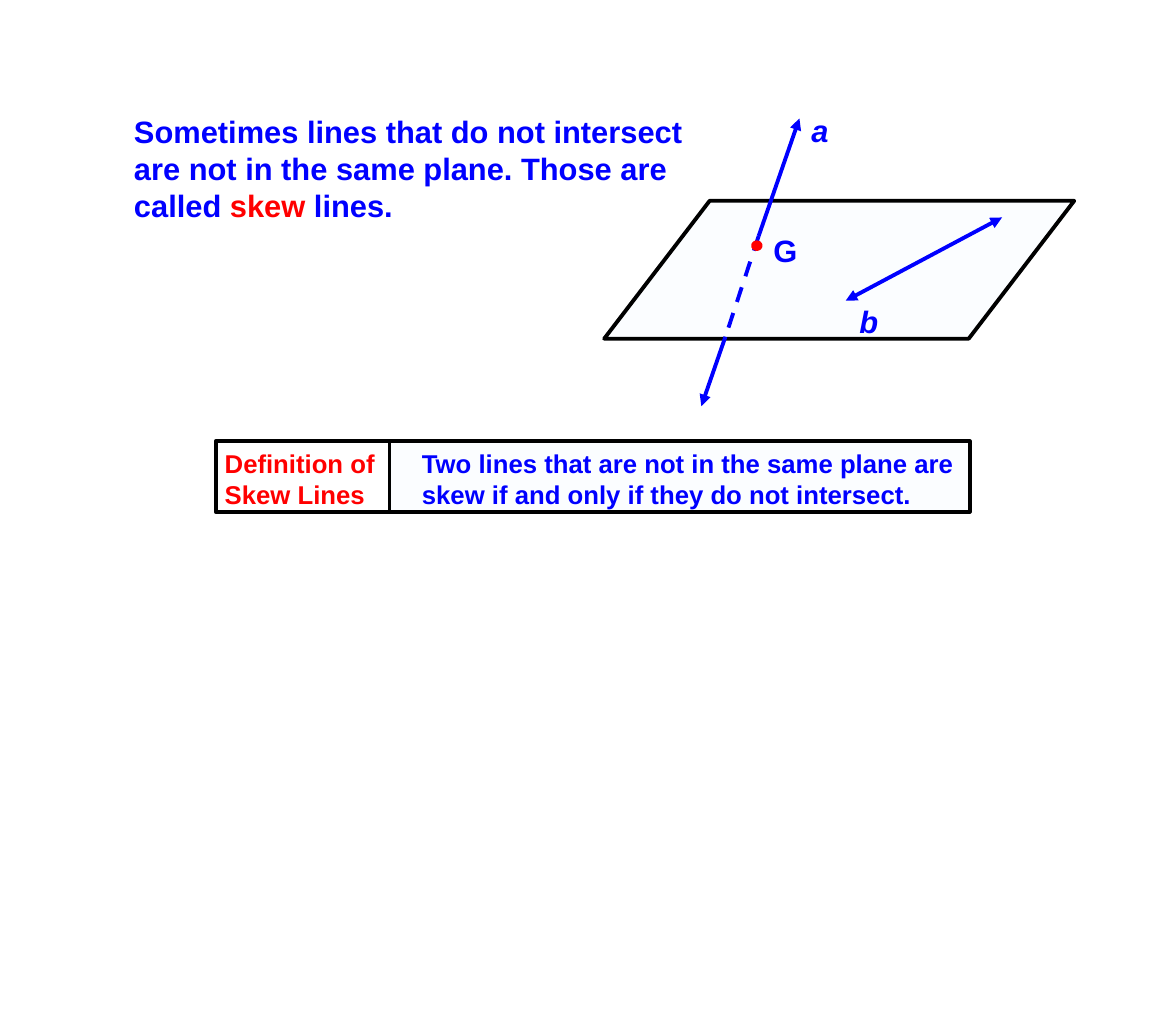
import pptx
import pptx.util
import pptx.dml.color
import pptx.enum.dml
import pptx.enum.shapes
import pptx.enum.text
import pptx.oxml.ns
from lxml import etree
from dataclasses import dataclass

KIND = pptx.enum.shapes.MSO_SHAPE
COLS, ROWS = 127.1, 111.1  # grid of tenth-inch cells


def cells(*counts):
    """Grid counts as slide lengths."""
    return [pptx.util.Inches(n / 10) for n in counts]


@dataclass(frozen=True)
class Theme:
    font: str = "Arial"
    blue: str = "0000FF"
    red: str = "FF0000"
    black: str = "000000"
    white: str = "FFFFFF"
    tint: str = "FBFDFF"
    large: int = 24
    small: int = 20
    stroke: int = 3
    dot: int = 6


THEME = Theme()


def rgb(color):
    return pptx.dml.color.RGBColor.from_string(color)


def paint(shape, fill, edge, width=THEME.stroke):
    shape.shadow.inherit = False
    shape.fill.solid()
    shape.fill.fore_color.rgb = rgb(fill)
    shape.line.color.rgb = rgb(edge)
    shape.line.width = pptx.util.Pt(width)


def write(shape, lines, size, slant=False):
    """Fill a shape with lines, each a list of (words, color) runs."""
    frame = shape.text_frame
    frame.word_wrap = True
    frame.vertical_anchor = pptx.enum.text.MSO_ANCHOR.TOP
    for i, runs in enumerate(lines):
        para = frame.paragraphs[0] if i == 0 else frame.add_paragraph()
        para.alignment = pptx.enum.text.PP_ALIGN.LEFT
        for words, color in runs:
            run = para.add_run()
            run.text = words
            font = run.font
            font.name, font.size = THEME.font, pptx.util.Pt(size)
            font.bold, font.italic = True, slant
            font.color.rgb = rgb(color)


def draw_line(slide, start, end, head=False, tail=False, dash=False):
    line = slide.shapes.add_connector(
        pptx.enum.shapes.MSO_CONNECTOR.STRAIGHT, *cells(*start, *end))
    line.line.color.rgb = rgb(THEME.blue)
    line.line.width = pptx.util.Pt(THEME.stroke)
    if dash:
        line.line.dash_style = pptx.enum.dml.MSO_LINE.DASH
    qn = pptx.oxml.ns.qn
    stroke = line.line._get_or_add_ln()
    for name, shown in (("a:headEnd", head), ("a:tailEnd", tail)):
        if shown:
            etree.SubElement(stroke, qn(name), type="triangle")
    etree.SubElement(line._element.spPr, qn("a:effectLst"))


def add_intro(slide, left, top, width, height):
    box = slide.shapes.add_textbox(*cells(left, top, width, height))
    write(box, [[
        ("Sometimes lines that do not intersect are not in the same plane. "
         "Those are called ", THEME.blue),
        ("skew", THEME.red),
        (" lines.", THEME.blue)]], THEME.large)


def add_figure(slide, left, top, width, height):
    """Line a piercing a plane at G, and line b lying in the plane."""
    def spot(x, y):
        return left + x, top + y

    slant, back, front = 11.4, 10.1, 25
    corners = [(0, front), (slant, back), (width, back),
               (width - slant, front)]
    points = [tuple(cells(*spot(*c))) for c in corners]
    form = slide.shapes.build_freeform(*points[0])
    form.add_line_segments(points[1:], close=True)
    paint(form.convert_to_shape(), THEME.tint, THEME.black)

    pierce = spot(16.7, 13.9)
    draw_line(slide, spot(26.1, 20.9), spot(43, 11.9), head=True, tail=True)
    draw_line(slide, pierce, spot(21.1, 1.2), tail=True)
    draw_line(slide, pierce, spot(13.3, 24.2), dash=True)
    draw_line(slide, spot(13.1, 24.8), spot(10.5, height), tail=True)

    dot = slide.shapes.add_shape(
        KIND.OVAL, *cells(*spot(16.3, 14.8), 0.4, 0.3))
    paint(dot, THEME.red, THEME.red, THEME.dot)

    for name, x, y, slanted in (("a", 21.4, 0, True), ("b", 26.6, 20.6, True),
                                ("G", 17.3, 13, False)):
        label = slide.shapes.add_textbox(*cells(*spot(x, y), 5.4, 5))
        write(label, [[(name, THEME.blue)]], THEME.large, slanted)


def add_rule(slide, left, top, width, height):
    """The term and its meaning in two adjoining boxes."""
    split = 18.8
    term = [[("Definition of", THEME.red)], [("Skew Lines", THEME.red)]]
    text = [[("Two lines that are not in the same plane are skew "
              "if and only if they do not intersect.", THEME.blue)]]
    for x, span, fill, inset, lines in (
            (0, split, THEME.white, 1, term),
            (split, width - split, THEME.tint, 3.5, text)):
        box = slide.shapes.add_shape(
            KIND.RECTANGLE, *cells(left + x, top, span, height))
        paint(box, fill, THEME.black)
        write(box, lines, THEME.small)
        frame = box.text_frame
        frame.margin_left, frame.margin_top = cells(inset, 0.7)
        frame.margin_bottom = 0


def main():
    deck = pptx.Presentation()
    deck.slide_width, deck.slide_height = cells(COLS, ROWS)
    slide = deck.slides.add_slide(deck.slide_layouts[6])
    add_intro(slide, 13.5, 11.7, 62.4, 13.1)
    add_figure(slide, 65.3, 11.6, 50.8, 32.3)
    add_rule(slide, 23.3, 47.7, 81.5, 7.6)
    deck.save("out.pptx")


if __name__ == "__main__":
    main()
